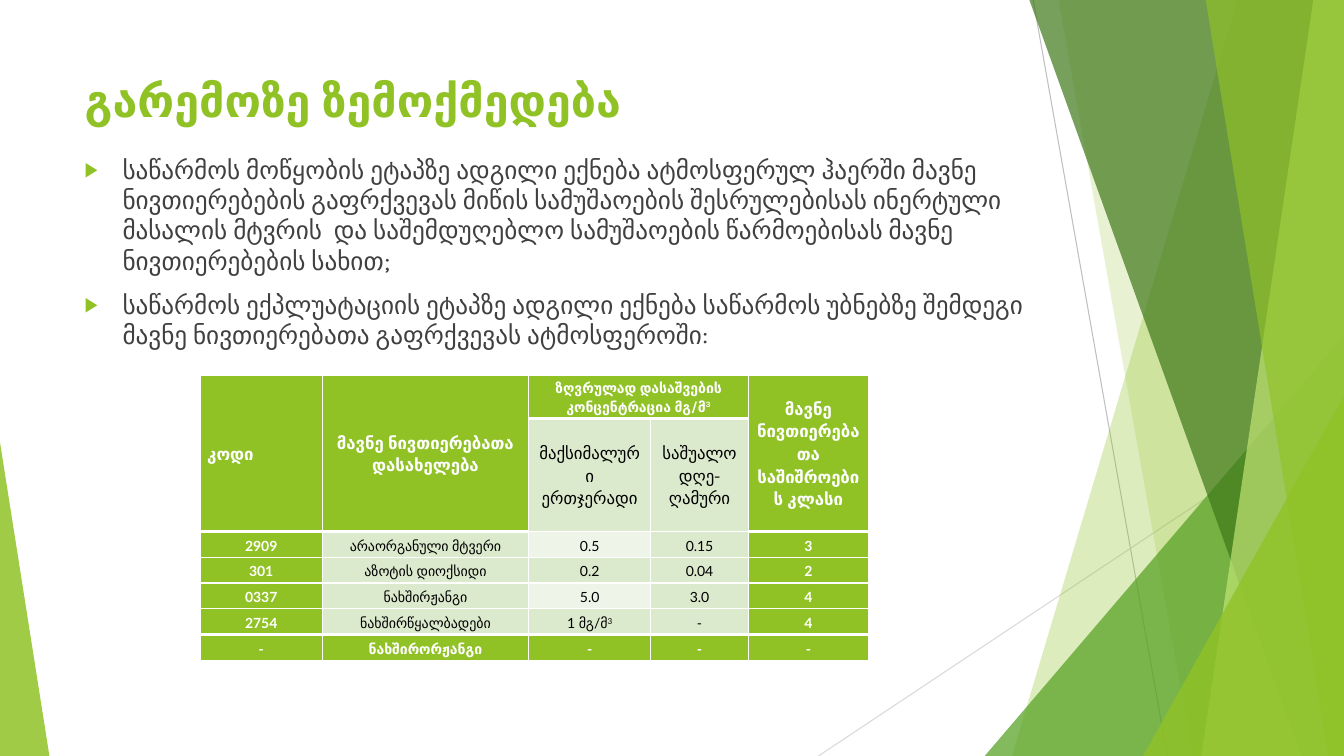
from lxml.etree import SubElement
from pptx import Presentation
from pptx.dml.color import RGBColor
from pptx.enum.shapes import MSO_CONNECTOR as Connector, MSO_SHAPE as Preset
from pptx.enum.text import MSO_ANCHOR as Anchor, MSO_AUTO_SIZE as AutoSize, PP_ALIGN as Align
from pptx.oxml.ns import qn
from pptx.util import Pt

WHITE = RGBColor(0xFF, 0xFF, 0xFF)
BLACK = RGBColor(0, 0, 0)
TEXT_GREY = RGBColor(0x40, 0x40, 0x40)
LINE_GREY = RGBColor(0xBF, 0xBF, 0xBF)
PALE_GREY = RGBColor(0xD9, 0xD9, 0xD9)
GREEN = RGBColor(0x90, 0xC2, 0x26)
LEAF_GREEN = RGBColor(0x54, 0xA0, 0x21)
DARK_GREEN = RGBColor(0x3F, 0x78, 0x19)
LIME = RGBColor(0xC0, 0xE4, 0x74)
CELL_GREEN = RGBColor(0xDB, 0xE9, 0xCD)
CELL_PALE = RGBColor(0xEE, 0xF4, 0xE8)

WIDTH, HEIGHT = 960, 540
TITLE = "გარემოზე ზემოქმედება"
BULLETS = [
    "საწარმოს მოწყობის ეტაპზე ადგილი ექნება ატმოსფერულ ჰაერში მავნე ნივთიერებების "
    "გაფრქვევას მიწის სამუშაოების შესრულებისას ინერტული მასალის მტვრის  და "
    "საშემდუღებლო სამუშაოების წარმოებისას მავნე ნივთიერებების სახით;",
    "საწარმოს ექპლუატაციის ეტაპზე ადგილი ექნება საწარმოს უბნებზე შემდეგი მავნე "
    "ნივთიერებათა გაფრქვევას ატმოსფეროში:",
]
# A "^" starts the superscript part of a cell.
ROWS = [
    ["კოდი", "მავნე ნივთიერებათა დასახელება", "ზღვრულად დასაშვების კონცენტრაცია მგ/მ^3",
     "", "მავნე ნივთიერებათა საშიშროების კლასი"],
    ["", "", "მაქსიმალური ერთჯერადი", "საშუალო დღე-ღამური", ""],
    ["2909", "არაორგანული მტვერი", "0.5", "0.15", "3"],
    ["301", "აზოტის დიოქსიდი", "0.2", "0.04", "2"],
    ["0337", "ნახშირჟანგი", "5.0", "3.0", "4"],
    ["2754", "ნახშირწყალბადები", "1 მგ/მ^3", "-", "4"],
    ["-", "ნახშირორჟანგი", "-", "-", "-"],
]
COLUMN_WIDTHS = [87.1, 147.6, 87.1, 69.8, 85.7]
ROW_HEIGHTS = [31, 80] + [18.4] * 5
TALL_HEADINGS = (0, 1, 4)
LAST_ROW = len(ROWS) - 1


def add_text(paragraph, text, *, font="Karla", size=18, color=TEXT_GREY, bold=False,
             superscript=False):
    run = paragraph.add_run()
    run.text = text
    run.font.name = font
    run.font.size = Pt(size)
    run.font.bold = bold
    run.font.color.rgb = color
    if superscript:
        run.font._element.set("baseline", "30000")


def add_color(parent, color, tag="a:solidFill"):
    holder = SubElement(parent, qn(tag))
    return SubElement(holder, qn("a:srgbClr"), val=str(color))


def add_hairline(shapes, start, end, color):
    line = shapes.add_connector(Connector.STRAIGHT, *map(Pt, start + end))
    line.line.color.rgb = color
    line.line.width = Pt(0.75)
    SubElement(line._element.spPr, qn("a:effectLst"))


def style_facet(shape, color, opacity):
    shape.shadow.inherit = False
    shape.line.fill.background()
    shape.fill.solid()
    shape.fill.fore_color.rgb = color
    color_element = shape._element.spPr.find(qn("a:solidFill"))[0]
    SubElement(color_element, qn("a:alpha"), val=str(opacity * 1000))


def add_band(shapes, top_x, bottom_x, color, opacity):
    """Add a full-height band from a slanted left edge to the slide's right edge."""
    top = -0.6
    builder = shapes.build_freeform(Pt(top_x), Pt(top))
    corners = [(WIDTH, top), (WIDTH, HEIGHT), (bottom_x, HEIGHT)]
    builder.add_line_segments([(Pt(x), Pt(y)) for x, y in corners])
    style_facet(builder.convert_to_shape(), color, opacity)


def add_corner(shapes, left, top, width, apex, color, opacity):
    """Add a triangle standing on the slide's bottom edge."""
    corner = shapes.add_shape(Preset.ISOSCELES_TRIANGLE, Pt(left), Pt(top),
                              Pt(width), Pt(HEIGHT - top))
    corner.adjustments[0] = apex
    style_facet(corner, color, opacity)


def add_backdrop(slide):
    group = slide.shapes.add_group_shape()
    shapes = group.shapes
    add_hairline(shapes, (738, 0), (833.8, HEIGHT), LINE_GREY)
    add_hairline(shapes, (WIDTH, 290.2), (584.6, HEIGHT), PALE_GREY)
    add_band(shapes, 884.2, 722.9, GREEN, 30)
    add_band(shapes, 756, 851.8, GREEN, 20)
    add_corner(shapes, 703.4, 239.8, 256.6, 1, LEAF_GREEN, 72)
    add_band(shapes, 735.1, 929.5, DARK_GREEN, 70)
    add_band(shapes, 938.2, 858.2, LIME, 70)
    add_band(shapes, 861.1, 949, GREEN, 65)
    add_corner(shapes, 816.5, 283, 143.5, 1, GREEN, 80)
    add_corner(shapes, 0, 316, 35.3, 0, GREEN, 85)
    slide.shapes._spTree.insert(2, group._element)  # behind the placeholders


def place(placeholder, left, top, width, height):
    placeholder.left, placeholder.top = Pt(left), Pt(top)
    placeholder.width, placeholder.height = Pt(width), Pt(height)
    frame = placeholder.text_frame
    frame.word_wrap = True
    frame.auto_size = AutoSize.NONE
    frame.vertical_anchor = Anchor.TOP
    return frame


def add_bullet(paragraph, text):
    paragraph.space_before = Pt(10)
    properties = paragraph._p.get_or_add_pPr()
    properties.set("marL", str(Pt(27)))
    properties.set("indent", str(Pt(-27)))
    add_color(properties, GREEN, "a:buClr")
    SubElement(properties, qn("a:buSzPct"), val="80000")
    SubElement(properties, qn("a:buFont"), typeface="Arial")
    SubElement(properties, qn("a:buChar"), char="▶")
    add_text(paragraph, text)


def edge_weight(row, column):
    """Give the width of the rule below a row."""
    below_heading = row == 0 or (row == 1 and column in TALL_HEADINGS)
    return 3 if below_heading or row == LAST_ROW - 1 else 1


def add_borders(cell, top, bottom):
    properties = cell._tc.get_or_add_tcPr()
    for side, weight in zip("LRTB", (1, 1, top, bottom)):
        border = SubElement(properties, qn(f"a:ln{side}"), w=str(Pt(weight)))
        add_color(border, WHITE)


def fill_cell(cell, row, column, text):
    green = row in (0, LAST_ROW) or column in (0, 4)
    add_borders(cell, edge_weight(row - 1, column), edge_weight(row, column))
    cell.fill.solid()
    pale = column == 2 and row in (2, 4)
    cell.fill.fore_color.rgb = GREEN if green else CELL_PALE if pale else CELL_GREEN
    cell.vertical_anchor = Anchor.MIDDLE
    cell.margin_left = cell.margin_right = Pt(5)
    cell.margin_top = cell.margin_bottom = 0
    if not text:
        return
    paragraph = cell.text_frame.paragraphs[0]
    paragraph.alignment = Align.JUSTIFY if row == column == 0 else Align.CENTER
    paragraph.line_spacing = 1.15
    heading = row < 2
    look = dict(font="Karla" if heading else "Lato",
                size=12 if heading and (row, column) != (0, 2) else 10,
                color=WHITE if green else BLACK, bold=green)
    base, _, power = text.partition("^")
    add_text(paragraph, base, **look)
    if power:
        add_text(paragraph, power, superscript=True, **look)


def add_emissions_table(slide):
    frame = slide.shapes.add_table(len(ROWS), len(COLUMN_WIDTHS), Pt(143), Pt(268),
                                   Pt(sum(COLUMN_WIDTHS)), Pt(sum(ROW_HEIGHTS)))
    table = frame.table
    table.first_row = table.horz_banding = False
    for column, width in zip(table.columns, COLUMN_WIDTHS):
        column.width = Pt(width)
    for row, height in zip(table.rows, ROW_HEIGHTS):
        row.height = Pt(height)
    for row, texts in enumerate(ROWS):
        for column, text in enumerate(texts):
            fill_cell(table.cell(row, column), row, column, text)
    for column in TALL_HEADINGS:
        table.cell(0, column).merge(table.cell(1, column))
    table.cell(0, 2).merge(table.cell(0, 3))


def main():
    presentation = Presentation()
    presentation.slide_width, presentation.slide_height = Pt(WIDTH), Pt(HEIGHT)
    slide = presentation.slides.add_slide(presentation.slide_layouts[1])
    add_backdrop(slide)

    title = place(slide.shapes.title, 53.3, 48.2, 676.8, 103.7).paragraphs[0]
    title.alignment = Align.LEFT
    add_text(title, TITLE, size=32, color=GREEN, bold=True)

    body = place(slide.placeholders[1], 53.3, 106.6, 721.4, 404.6)
    for index, text in enumerate(BULLETS):
        add_bullet(body.add_paragraph() if index else body.paragraphs[0], text)

    add_emissions_table(slide)
    presentation.save("out.pptx")


if __name__ == "__main__":
    main()
